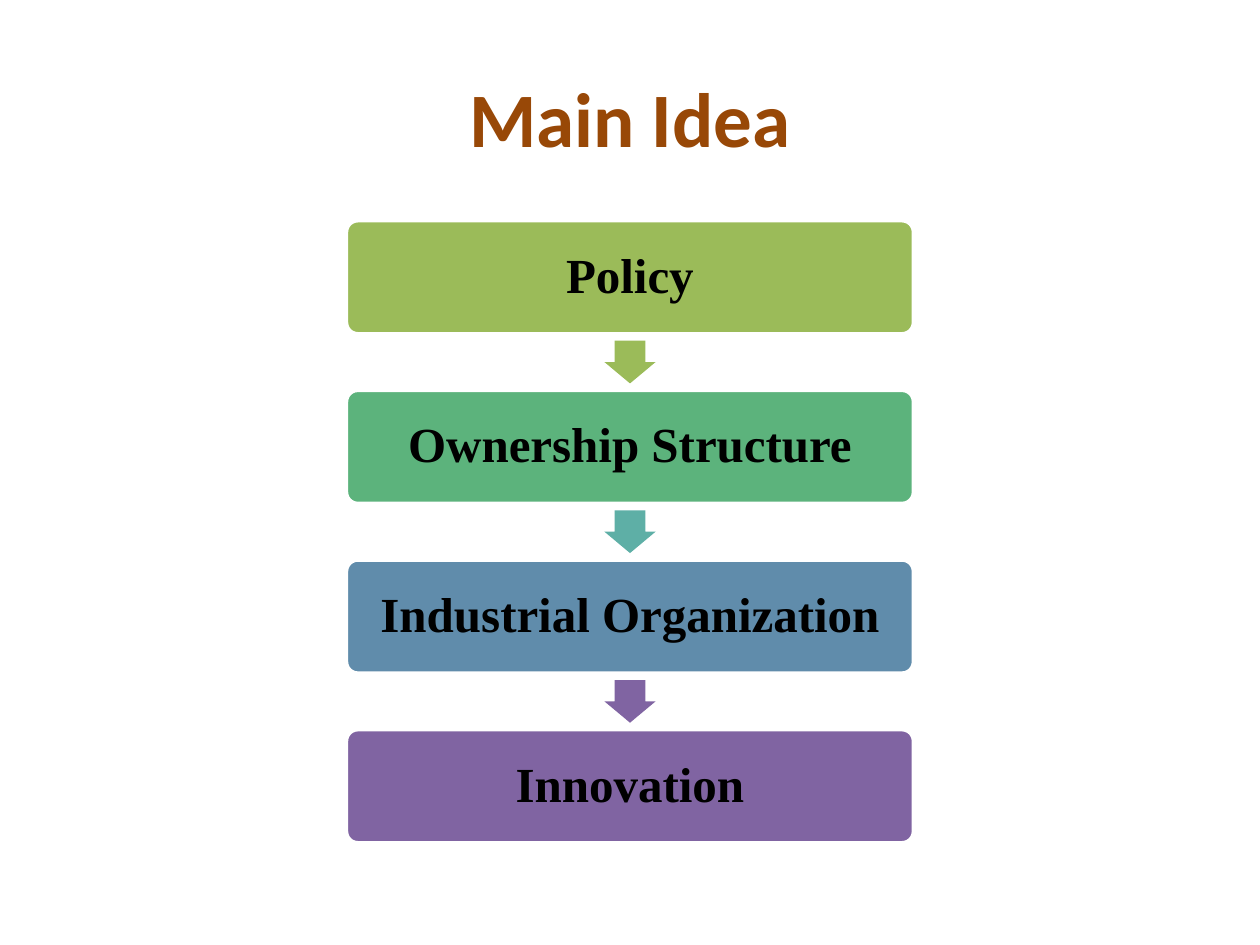
from pptx import Presentation
from pptx import util as u
from pptx.dml.color import RGBColor
from pptx.enum import shapes, text

COLOURS = {
    "title": "984807",
    "text": "000000",
    "outline": "FFFFFF",
    "green": "9BBB59",
    "emerald": "5CB37C",
    "teal": "5EAFA6",
    "blue": "608CAB",
    "purple": "8064A2",
}
STEPS = [
    ("Policy", "green"),
    ("Ownership Structure", "emerald"),
    ("Industrial Organization", "blue"),
    ("Innovation", "purple"),
]
ARROWS = ["green", "teal", "purple"]
PAGE_WIDTH, PAGE_HEIGHT = 25.4, 19.05
STEP_WIDTH, STEP_HEIGHT = 11.43, 2.28
STEP_TOP, STEP_PITCH = 4.45, 3.42
ARROW_LENGTH, ARROW_BREADTH = 0.86, 1.03


def apply(target, values):
    for name, value in values.items():
        setattr(target, name, value)


def colour(name):
    return RGBColor.from_string(COLOURS[name])


class SlideBuilder:
    title_font = {"name": "Calibri", "size": u.Pt(44), "bold": True}
    step_font = {"name": "Times New Roman", "size": u.Pt(28), "bold": True}
    step_para = {"alignment": text.PP_ALIGN.CENTER, "line_spacing": 0.9}
    step_frame = {
        "word_wrap": True,
        "vertical_anchor": text.MSO_ANCHOR.MIDDLE,
        "margin_left": u.Cm(0.3),
        "margin_top": u.Cm(0.3),
        "margin_right": u.Cm(0.3),
        "margin_bottom": u.Cm(0.3),
    }

    def __init__(self, page):
        self.page = page

    def label(self, frame, wording, font, ink):
        para = frame.paragraphs[0]
        span = para.add_run()
        span.text = wording
        apply(span.font, font)
        span.font.color.rgb = colour(ink)
        return para

    def title(self, wording):
        box = self.page.shapes.title
        apply(box, {"left": u.Cm(1.27), "top": u.Cm(0.76),
                    "width": u.Cm(22.86), "height": u.Cm(3.18)})
        box.text_frame.vertical_anchor = text.MSO_ANCHOR.MIDDLE
        para = self.label(box.text_frame, wording, self.title_font, "title")
        para.alignment = text.PP_ALIGN.CENTER

    def shape(self, kind, middle, width, height, fill, adjustments):
        box = self.page.shapes.add_shape(
            kind, u.Cm((PAGE_WIDTH - width) / 2), u.Cm(middle - height / 2),
            u.Cm(width), u.Cm(height))
        for index, value in enumerate(adjustments):
            box.adjustments[index] = value
        box.shadow.inherit = False
        box.fill.solid()
        box.fill.fore_color.rgb = colour(fill)
        return box

    def step(self, wording, middle, fill):
        box = self.shape(shapes.MSO_SHAPE.ROUNDED_RECTANGLE, middle,
                         STEP_WIDTH, STEP_HEIGHT, fill, [0.1])
        box.line.color.rgb = colour("outline")
        box.line.width = u.Pt(2)
        apply(box.text_frame, self.step_frame)
        para = self.label(box.text_frame, wording, self.step_font, "text")
        apply(para, self.step_para)

    def arrow(self, middle, fill):
        box = self.shape(shapes.MSO_SHAPE.RIGHT_ARROW, middle,
                         ARROW_LENGTH, ARROW_BREADTH, fill, [0.6, 0.5])
        box.rotation = 90
        box.line.fill.background()


def main():
    deck = Presentation()
    apply(deck, {"slide_width": u.Cm(PAGE_WIDTH), "slide_height": u.Cm(PAGE_HEIGHT)})
    builder = SlideBuilder(deck.slides.add_slide(deck.slide_layouts[5]))
    builder.title("Main Idea")
    first_middle = STEP_TOP + STEP_HEIGHT / 2
    for index, (wording, fill) in enumerate(STEPS):
        builder.step(wording, first_middle + index * STEP_PITCH, fill)
    for index, fill in enumerate(ARROWS):
        builder.arrow(first_middle + (index + 0.5) * STEP_PITCH, fill)
    deck.save("out.pptx")


if __name__ == "__main__":
    main()
